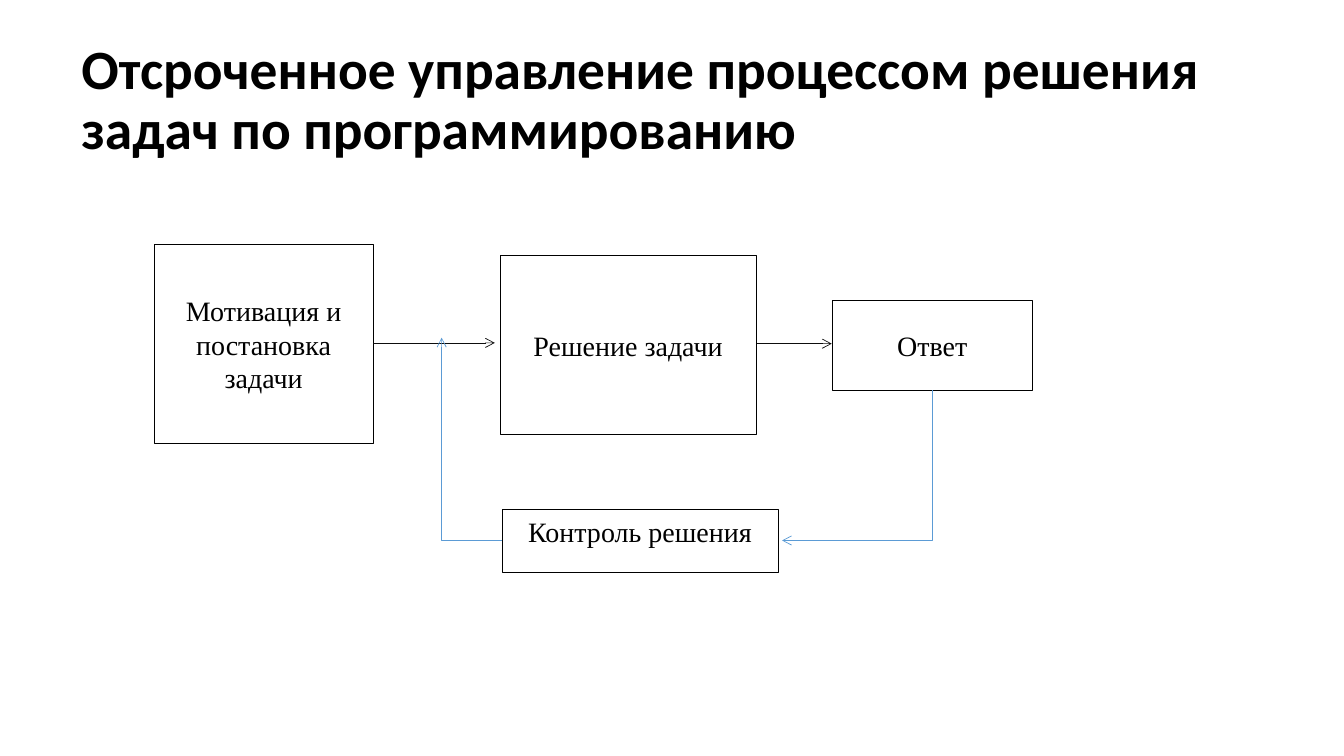
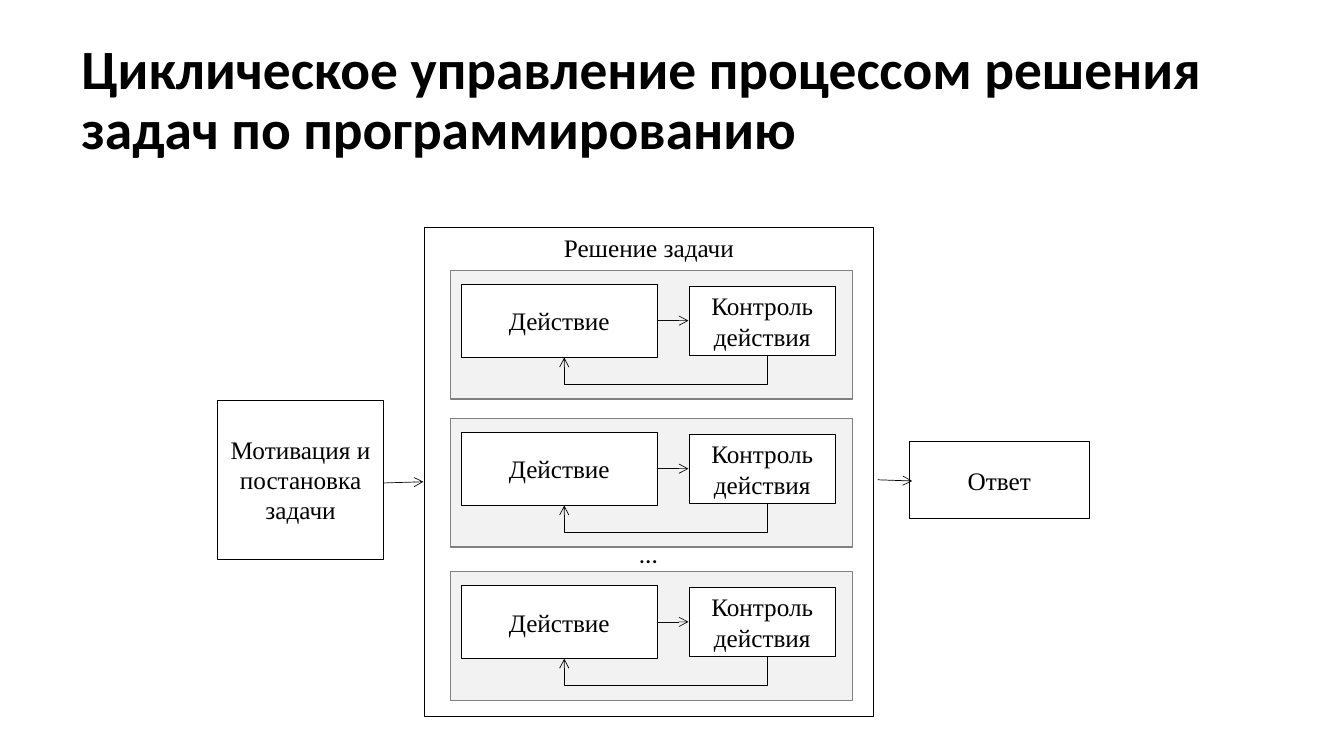
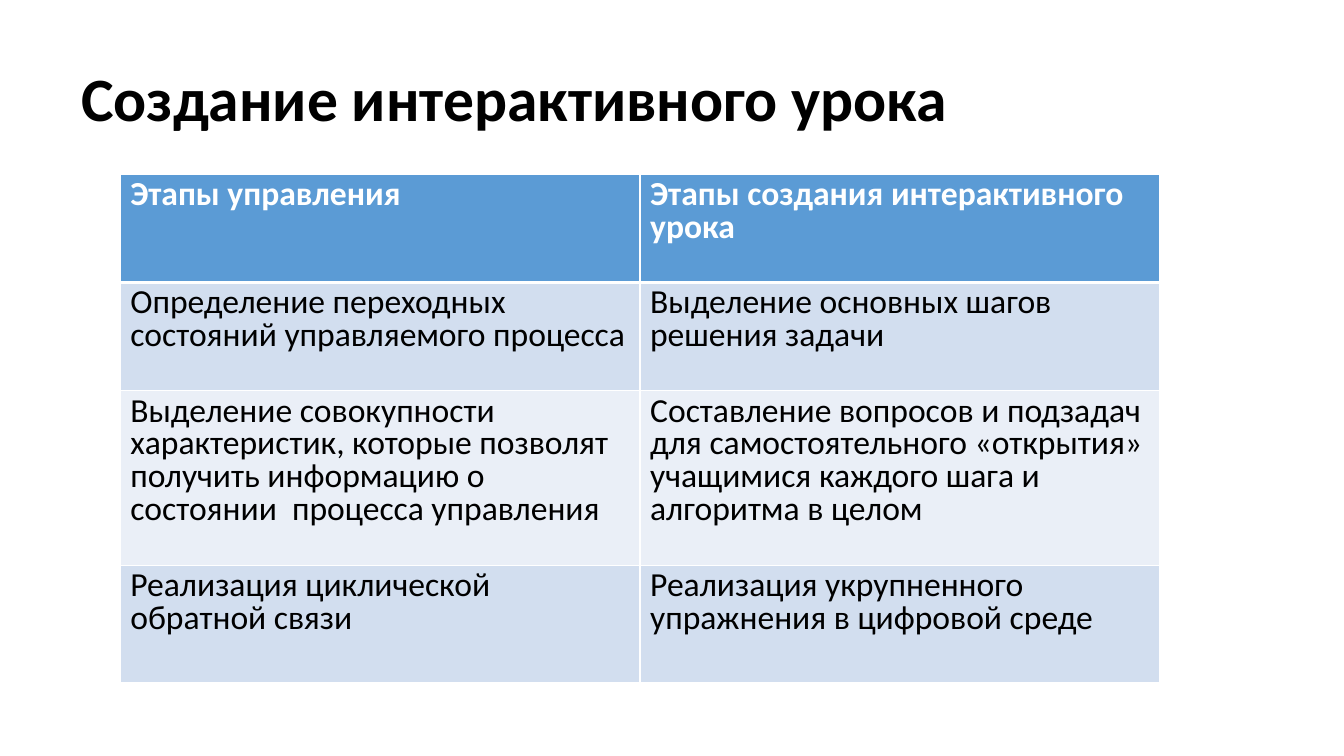
from lxml import etree
from pptx import Presentation
from pptx.dml.color import RGBColor
from pptx.enum.shapes import MSO_CONNECTOR, MSO_SHAPE
from pptx.enum.text import MSO_ANCHOR, PP_ALIGN
from pptx.oxml.ns import qn
from pptx.util import Cm, Pt

RECT = MSO_SHAPE.RECTANGLE
STRAIGHT, ELBOW = MSO_CONNECTOR.STRAIGHT, MSO_CONNECTOR.ELBOW
TOP, MIDDLE = MSO_ANCHOR.TOP, MSO_ANCHOR.MIDDLE
LEFT, CENTER = PP_ALIGN.LEFT, PP_ALIGN.CENTER

BLACK, DARK, WHITE = "000000", "0D0D0D", "FFFFFF"
BLUE, GRAY, PALE = "5B9BD5", "808080", "F2F2F2"
BANDS = ("D2DEEF", "EAEFF7")

TITLE = {"name": "Calibri", "size": Pt(39.6), "bold": True}
BIG_TITLE = {**TITLE, "size": Pt(44)}
LARGE = {"name": "Times New Roman", "size": Pt(20)}
SMALL = {"name": "Times New Roman", "size": Pt(18)}
DOTS = {"name": "Calibri", "size": Pt(18)}
HEAD = {"name": "Calibri", "size": Pt(24), "bold": True}
BODY = {**HEAD, "bold": False}

STAGES = [
    ("Этапы управления", "Этапы создания интерактивного урока"),
    ("Определение переходных состояний управляемого процесса",
     "Выделение основных шагов решения задачи"),
    ("Выделение совокупности характеристик, которые позволят получить "
     "информацию о состоянии  процесса управления",
     "Составление вопросов и подзадач для самостоятельного «открытия» "
     "учащимися каждого шага и алгоритма в целом"),
    ("Реализация циклической обратной связи",
     "Реализация укрупненного упражнения в цифровой среде"),
]


def rgb(value):
    """Turn a hex string into a colour."""
    return RGBColor.from_string(value)


def write(tf, text, fmt, color=BLACK, align=LEFT, spacing=1.0):
    """Put one formatted paragraph into a text frame."""
    tf.word_wrap = True
    p = tf.paragraphs[0]
    p.alignment, p.line_spacing = align, spacing
    r = p.add_run()
    r.text = text
    for key, value in fmt.items():
        setattr(r.font, key, value)
    r.font.color.rgb = rgb(color)


def add_text(s, at, text, fmt, spacing=1.0):
    """Add a text box with vertically centred text."""
    tf = s.shapes.add_textbox(*map(Cm, at)).text_frame
    tf.vertical_anchor = MIDDLE
    write(tf, text, fmt, spacing=spacing)


def add_box(s, at, text="", fmt=LARGE, anchor=MIDDLE, fill=WHITE, line=BLACK, width=0.5):
    """Add a bordered rectangle with an optional centred label."""
    sp = s.shapes.add_shape(RECT, *map(Cm, at))
    sp.shadow.inherit = False
    sp.fill.solid()
    sp.fill.fore_color.rgb = rgb(fill)
    sp.line.color.rgb = rgb(line)
    sp.line.width = Pt(width)
    if text:
        sp.text_frame.vertical_anchor = anchor
        write(sp.text_frame, text, fmt, align=CENTER)


def add_arrow(s, start, end, color=DARK, kind=STRAIGHT):
    """Add a thin connector with an open arrowhead at its end."""
    sp = s.shapes.add_connector(kind, *map(Cm, (*start, *end)))
    sp.line.color.rgb = rgb(color)
    sp.line.width = Pt(0.5)
    etree.SubElement(sp.line._get_or_add_ln(), qn("a:tailEnd"), type="arrow")
    etree.SubElement(sp._element.spPr, qn("a:effectLst"))
    return sp


def add_elbow(s, start, end, rot, color=BLACK, drop=None):
    """Add a rotated bent arrow; a drop makes it a U-shaped return path."""
    (x1, y1), (x2, y2) = start, end
    w, h = abs(x2 - x1), abs(y2 - y1)
    if rot == 90:
        w, h = h, w
    x, y = (x1 + x2 - w) / 2, (y1 + y2 - h) / 2
    sp = add_arrow(s, (x, y), (x + w, y + h), color, ELBOW)
    spPr = sp._element.spPr
    spPr.find(qn("a:xfrm")).set("rot", str(rot * 60000))
    geom = spPr.find(qn("a:prstGeom"))
    if drop is None:
        geom.set("prst", "bentConnector2")
    else:
        guides = geom.get_or_add_avLst()
        etree.SubElement(guides, qn("a:gd"), name="adj1",
                         fmla=f"val {round(drop / w * 100000)}")


def add_cycle(s, x, y):
    """Add a panel with an action, its check and the way back."""
    add_box(s, (x, y, 10.13, 3.25), fill=PALE, line=GRAY, width=1)
    add_box(s, (x + 0.28, y + 0.36, 4.93, 1.83), "Действие", SMALL)
    add_box(s, (x + 6.02, y + 0.4, 3.68, 1.75), "Контроль действия", SMALL)
    add_arrow(s, (x + 5.2, y + 1.27), (x + 6, y + 1.27))
    add_elbow(s, (x + 7.98, y + 2.15), (x + 2.87, y + 2.2), 90, drop=0.72)


def style_cell(cell, text, fmt, color, fill, top, bottom):
    """Fill a table cell and give it white borders."""
    write(cell.text_frame, text, fmt, color, spacing=0.8)
    tcPr = cell._tc.get_or_add_tcPr()
    for side, width in {"L": 1, "R": 1, "T": top, "B": bottom}.items():
        ln = etree.SubElement(tcPr, qn(f"a:ln{side}"), w=str(Pt(width)))
        etree.SubElement(etree.SubElement(ln, qn("a:solidFill")), qn("a:srgbClr"), val=WHITE)
    cell.fill.solid()
    cell.fill.fore_color.rgb = rgb(fill)


def add_stages(s, x, y, col_width, heights):
    """Add the table of stages with a header and banded rows."""
    table = s.shapes.add_table(len(STAGES), 2, Cm(x), Cm(y),
                               Cm(2 * col_width), Cm(sum(heights))).table
    for col in table.columns:
        col.width = Cm(col_width)
    for i, (texts, height) in enumerate(zip(STAGES, heights)):
        table.rows[i].height = Cm(height)
        look = (BODY, BLACK, BANDS[(i - 1) % 2]) if i else (HEAD, WHITE, BLUE)
        for j, text in enumerate(texts):
            style_cell(table.cell(i, j), text, *look,
                       top=3 if i == 1 else 1, bottom=1 if i else 3)


def new_slide(prs, title, fmt=TITLE):
    """Add a blank slide with the shared title."""
    s = prs.slides.add_slide(prs.slide_layouts[6])
    add_text(s, (1.8, 0.71, 29.21, 3.68), title, fmt, spacing=0.9)
    return s


def delayed_slide(prs):
    """Build the slide on delayed control."""
    s = new_slide(prs, "Отсроченное управление процессом решения задач по программированию")
    add_box(s, (12.6, 6.43, 6.46, 4.52), "Решение задачи")
    add_box(s, (20.98, 7.57, 5.03, 2.26), "Ответ")
    add_box(s, (3.89, 6.15, 5.51, 5.03), "Мотивация и постановка задачи")
    add_box(s, (12.65, 12.83, 6.96, 1.6), "Контроль решения", anchor=TOP)
    add_arrow(s, (9.4, 8.64), (12.47, 8.64))
    add_arrow(s, (19.07, 8.66), (20.96, 8.66))
    add_elbow(s, (23.5, 9.83), (19.71, 13.62), 90, BLUE)
    add_elbow(s, (12.65, 13.62), (11.13, 8.51), 180, BLUE)


def cyclic_slide(prs):
    """Build the slide on cyclic control."""
    s = new_slide(prs, "Циклическое управление процессом решения задач по программированию")
    add_box(s, (22.91, 11.13, 4.55, 1.93), "Ответ", SMALL)
    add_arrow(s, (22.12, 12.09), (22.99, 12.12), BLACK)
    add_box(s, (5.49, 10.08, 4.17, 4.01), "Мотивация и постановка задачи", SMALL)
    add_box(s, (10.69, 5.72, 11.33, 12.34), "Решение задачи", SMALL, TOP)
    add_arrow(s, (9.65, 12.17), (10.67, 12.14))
    for y in (6.81, 10.54, 14.4):
        add_cycle(s, 11.35, y)
    add_text(s, (15.85, 13.18, 1.78, 1.52), "...", DOTS)


def lesson_slide(prs):
    """Build the slide with the table of stages."""
    s = new_slide(prs, "Создание интерактивного урока", BIG_TITLE)
    add_stages(s, 3.03, 4.4, 13.1, (2.72, 2.73, 4.39, 2.95))


def main():
    """Build and save the presentation."""
    prs = Presentation()
    prs.slide_width, prs.slide_height = Cm(33.87), Cm(19.05)
    delayed_slide(prs)
    cyclic_slide(prs)
    lesson_slide(prs)
    prs.save("out.pptx")


if __name__ == "__main__":
    main()
